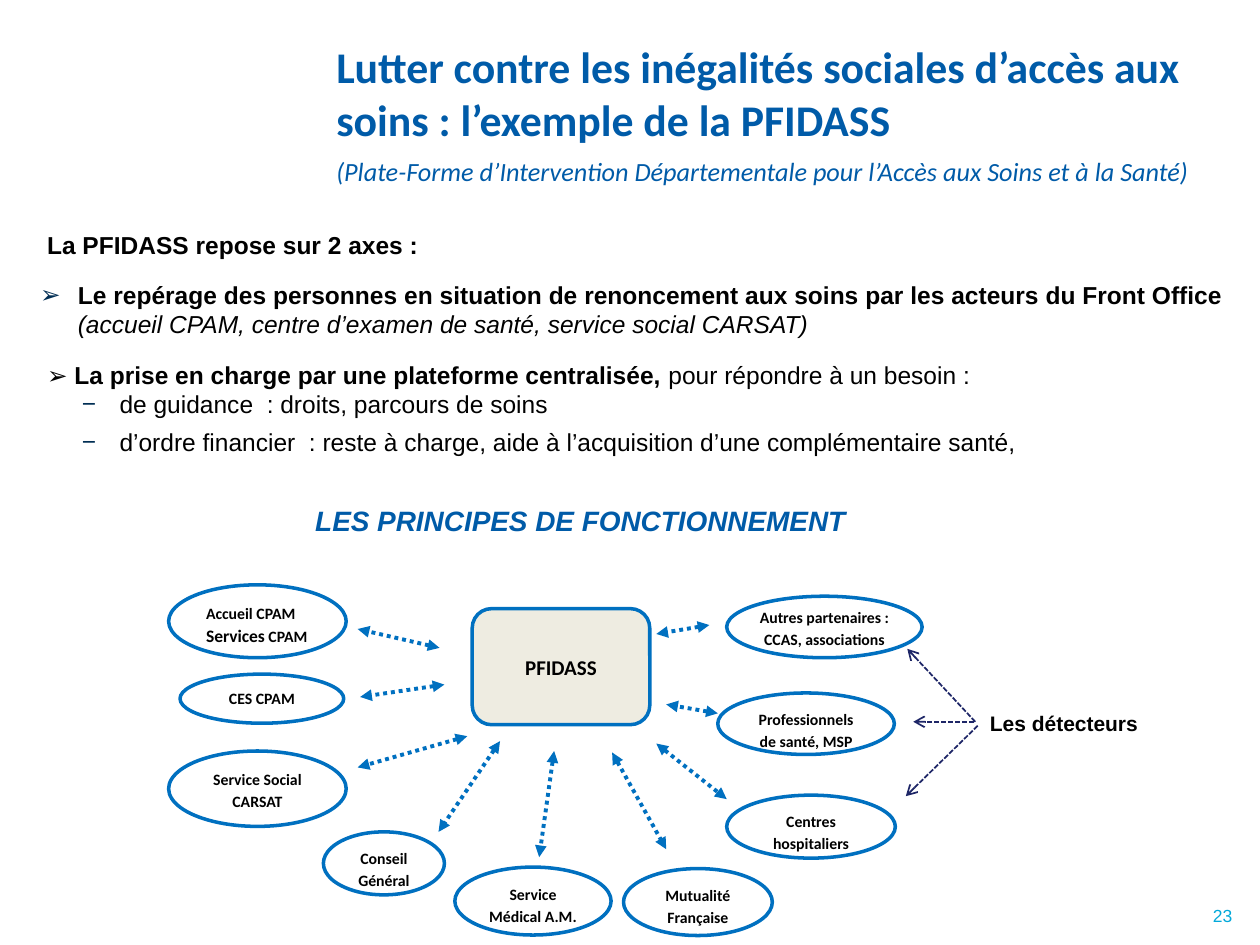
from dataclasses import dataclass

from lxml import etree
from pptx import Presentation
from pptx.dml.color import RGBColor
from pptx.enum import dml, shapes, text
from pptx.oxml import ns
from pptx.util import Cm, Pt


@dataclass(frozen=True)
class Theme:
    ink: str = "000000"
    blue: str = "005BA8"
    edge: str = "0070C0"
    navy: str = "1E2667"
    mark: str = "002E54"
    page: str = "03A9DA"
    sand: str = "EEECE1"
    white: str = "FFFFFF"
    head: str = "Calibri"
    body: str = "Arial"
    title: float = 25
    sub: float = 15
    band: float = 16
    copy: float = 14
    label: float = 12
    node: float = 9
    small: float = 10


T = Theme()
ALIGN = text.PP_ALIGN
ANCHOR = text.MSO_ANCHOR
SHAPE = shapes.MSO_SHAPE


def rgb(code):
    return RGBColor.from_string(code)


def child(node, tag, **attrs):
    return etree.SubElement(node, ns.qn(tag), attrs)


def shift(box, x, y, w, h):
    """Turn a place inside box into a place on the slide, in cm."""
    return box[0] + x, box[1] + y, w, h


def setup(frame, pad=(0.25, 0.13), anchor=ANCHOR.TOP):
    frame.word_wrap = True
    frame.vertical_anchor = anchor
    frame.margin_left = frame.margin_right = Cm(pad[0])
    frame.margin_top = frame.margin_bottom = Cm(pad[1])
    return frame


def add_text(slide, box, **opts):
    area = slide.shapes.add_textbox(*map(Cm, box))
    return setup(area.text_frame, **opts)


def add_para(frame, first=False, align=ALIGN.LEFT, before=0):
    para = frame.paragraphs[0] if first else frame.add_paragraph()
    para.alignment = align
    if before:
        para.space_before = Pt(before)
    return para


def add_run(para, words, size, font=T.body, color=T.ink, bold=False, italic=False):
    run = para.add_run()
    run.text = words
    run.font.size, run.font.name = Pt(size), font
    run.font.bold, run.font.italic = bold, italic
    run.font.color.rgb = rgb(color)


def indent(para, left, sign=None, hang=0.76):
    props = para._p.get_or_add_pPr()
    props.set("marL", str(Cm(left)))
    if sign:
        props.set("indent", str(-Cm(hang)))
        child(child(props, "a:buClr"), "a:srgbClr", val=T.mark)
        child(props, "a:buFont", typeface=T.body)
        child(props, "a:buChar", char=sign)


def add_form(slide, kind, box, fill, edge=None, **opts):
    form = slide.shapes.add_shape(kind, *map(Cm, box))
    form.shadow.inherit = False
    form.fill.solid()
    form.fill.fore_color.rgb = rgb(fill)
    if edge:
        form.line.color.rgb = rgb(edge)
        form.line.width = Pt(2)
    else:
        form.line.fill.background()
    return setup(form.text_frame, **opts)


def add_arrow(slide, box, ends, color, width, dash, tips):
    x1, y1, x2, y2 = ends
    points = (box[0] + x1, box[1] + y1, box[0] + x2, box[1] + y2)
    link = slide.shapes.add_connector(shapes.MSO_CONNECTOR.STRAIGHT, *map(Cm, points))
    link.line.color.rgb = rgb(color)
    link.line.width = Pt(width)
    link.line.dash_style = dash
    line = link.line._get_or_add_ln()
    for tag, tip in tips.items():
        child(line, tag, type=tip)
    child(link._element.spPr, "a:effectLst")


def add_title(slide, box):
    frame = add_text(slide, box, pad=(0, 0), anchor=ANCHOR.MIDDLE)
    add_run(add_para(frame, first=True),
            "Lutter contre les inégalités sociales d’accès aux soins : l’exemple de la PFIDASS",
            T.title, T.head, T.blue, bold=True)
    add_run(add_para(frame, before=6),
            "(Plate-Forme d’Intervention Départementale pour l’Accès aux Soins et à la Santé)",
            T.sub, T.head, T.blue, italic=True)


def add_body(slide, box):
    frame = add_text(slide, box)
    para = add_para(frame, first=True, align=ALIGN.JUSTIFY)
    indent(para, 0.14)
    add_run(para, "La PFIDASS repose sur 2 axes :", T.copy, bold=True)

    para = add_para(frame, align=ALIGN.JUSTIFY, before=12)
    indent(para, 0.76, "➢")
    add_run(para, "Le repérage des personnes en situation de renoncement aux soins "
            "par les acteurs du Front Office ", T.copy, bold=True)
    add_run(para, "(accueil CPAM, centre d’examen de santé, service social CARSAT)",
            T.copy, italic=True)

    para = add_para(frame, align=ALIGN.JUSTIFY, before=12)
    indent(para, 0.14)
    add_run(para, "➢ La prise en charge par une plateforme centralisée,", T.copy, bold=True)
    add_run(para, " pour répondre à un besoin :", T.copy)

    needs = (
        ("de guidance  : droits, parcours de soins", 0),
        ("d’ordre financier  : reste à charge, aide à l’acquisition "
         "d’une complémentaire santé,", 5),
    )
    for words, gap in needs:
        para = add_para(frame, align=ALIGN.JUSTIFY, before=gap)
        indent(para, 1.6, "−")
        add_run(para, words, T.copy)


def add_band(slide, box):
    frame = add_form(slide, SHAPE.RECTANGLE, box, T.white, anchor=ANCHOR.MIDDLE)
    add_run(add_para(frame, first=True, align=ALIGN.CENTER),
            "LES PRINCIPES DE FONCTIONNEMENT", T.band, color=T.blue, bold=True, italic=True)


def add_node(slide, box, lines, pad=(0.23, 0.1), align=ALIGN.CENTER):
    """Draw an ellipse; each line is a list of (words, size) runs."""
    frame = add_form(slide, SHAPE.OVAL, box, T.white, T.edge, pad=pad)
    for i, line in enumerate(lines):
        para = add_para(frame, first=i == 0, align=align)
        para.line_spacing = 1.15
        for words, size in line:
            add_run(para, words, size, T.head, bold=True)


def add_network(slide, box):
    add_node(slide, shift(box, 0, 0, 3.58, 1.47),
             [[("Accueil CPAM", T.node)], [("Services", T.small), (" CPAM", T.node)]],
             align=ALIGN.LEFT)
    add_node(slide, shift(box, 11.25, 0.23, 3.94, 1.24),
             [[("Autres partenaires : CCAS, associations", T.node)]], pad=(0, 0))
    nodes = (
        ("CES CPAM", 0.23, 1.8, 3.3, 0.99),
        ("Service Social CARSAT", 0, 3.35, 3.58, 1.52),
        ("Professionnels de santé, MSP", 11.07, 2.18, 3.56, 1.24),
        ("Conseil Général", 3.12, 4.98, 2.44, 1.27),
        ("Mutualité Française", 9.17, 5.72, 3, 1.35),
        ("Centres hospitaliers", 11.25, 4.24, 3.4, 1.27),
        ("Service Médical A.M.", 5.77, 5.69, 3.15, 1.37),
    )
    for name, *place in nodes:
        add_node(slide, shift(box, *place), [[(name, T.node)]])
    links = (
        (5.56, 2.01, 3.86, 2.26), (5.46, 1.27, 3.81, 0.89), (6.02, 3.05, 3.81, 3.68),
        (7.77, 3.35, 7.47, 5.49), (8.94, 3.38, 10.03, 5.33), (9.83, 3.2, 11.25, 4.32),
        (11.07, 2.59, 10.03, 2.41), (6.68, 3.15, 5.44, 4.98), (10.9, 0.81, 9.83, 0.99),
    )
    tips = {"a:headEnd": "triangle", "a:tailEnd": "triangle"}
    for ends in links:
        add_arrow(slide, box, ends, T.edge, 2.25, dml.MSO_LINE.ROUND_DOT, tips)
    hub = add_form(slide, SHAPE.ROUNDED_RECTANGLE, shift(box, 6.12, 0.48, 3.58, 2.34),
                   T.sand, T.edge, anchor=ANCHOR.MIDDLE)
    add_run(add_para(hub, first=True, align=ALIGN.CENTER), "PFIDASS", T.label, T.head, bold=True)


def add_legend(slide, box):
    frame = add_form(slide, SHAPE.RECTANGLE, shift(box, 1.22, 0.46, 3.94, 2.06),
                     T.white, anchor=ANCHOR.MIDDLE)
    add_run(add_para(frame, first=True, align=ALIGN.CENTER), "Les détecteurs", T.label, bold=True)
    for ends in ((1.4, 1.47, 0.03, 0), (1.37, 1.47, 0.15, 1.47), (1.45, 1.55, 0, 2.97)):
        add_arrow(slide, box, ends, T.navy, 1, dml.MSO_LINE.SQUARE_DOT, {"a:tailEnd": "arrow"})


def add_page(slide, box):
    frame = add_text(slide, box, pad=(0, 0))
    add_run(add_para(frame, first=True, align=ALIGN.RIGHT), "23", T.small, color=T.page)


def main():
    deck = Presentation()
    deck.slide_width, deck.slide_height = Cm(25.4), Cm(19.05)
    slide = deck.slides.add_slide(deck.slide_layouts[6])
    add_page(slide, (22.12, 18.24, 2.72, 0.81))
    add_body(slide, (0.56, 4.5, 24.36, 14.33))
    add_band(slide, (4.67, 9.86, 14.07, 1.24))
    add_network(slide, (3.4, 11.79))
    add_legend(slide, (18.26, 13.08))
    add_title(slide, (6.78, 0.38, 18.26, 3.81))
    deck.save("out.pptx")


if __name__ == "__main__":
    main()
